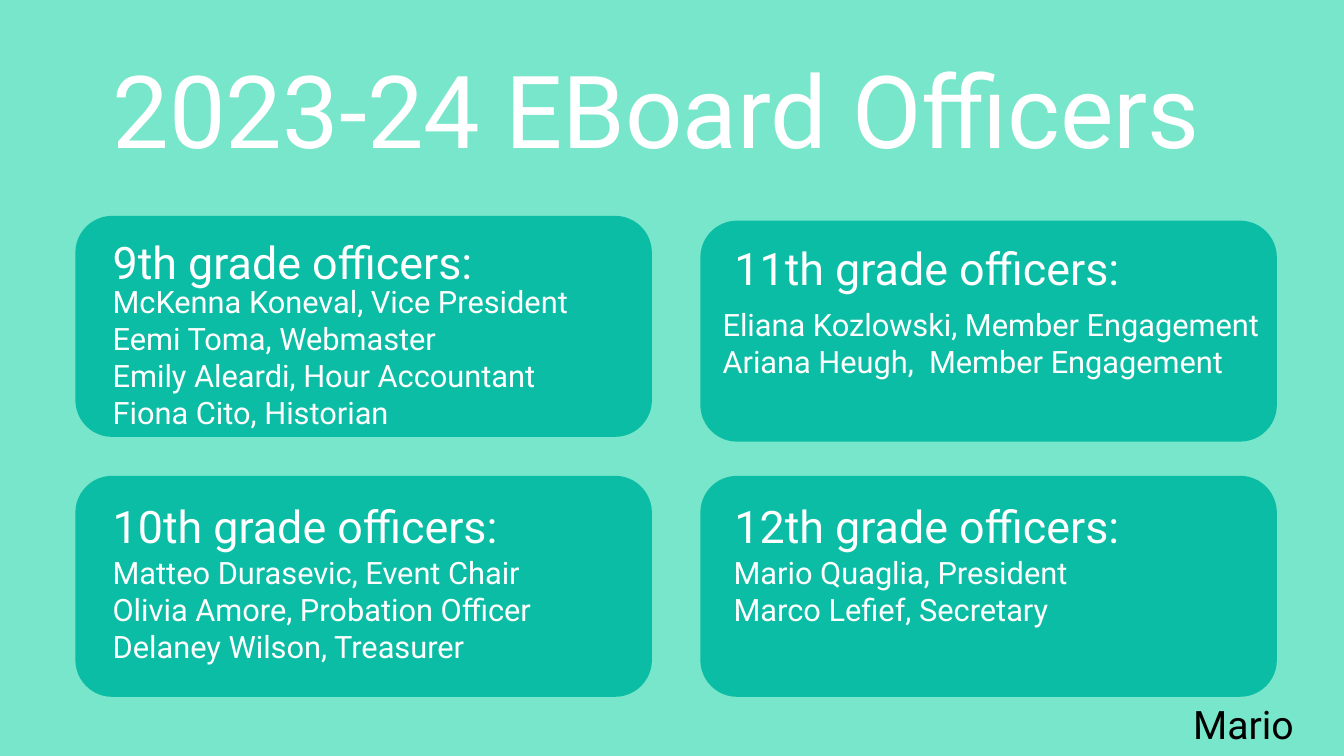
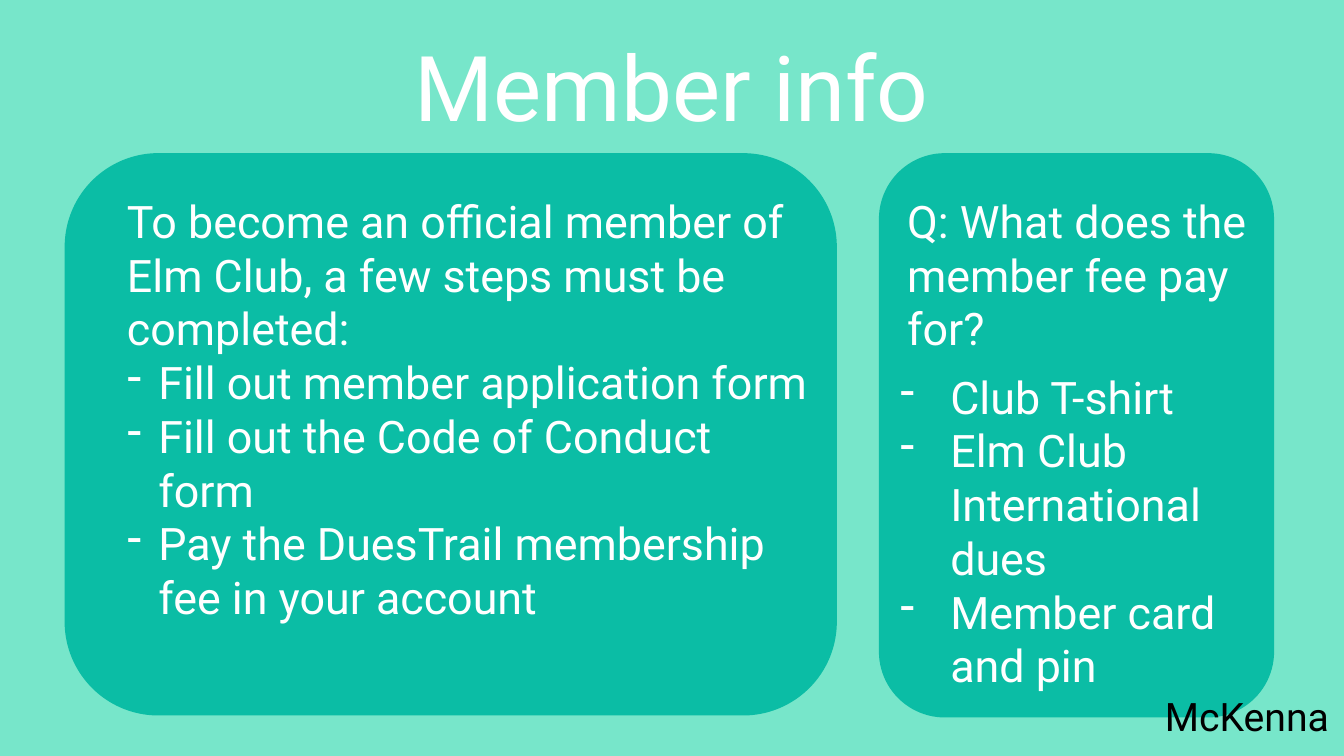
import dataclasses
import typing

import pptx
import pptx.dml.color
import pptx.enum.shapes
import pptx.enum.text
import pptx.oxml
import pptx.oxml.ns
import pptx.slide
import pptx.util

Cm = pptx.util.Cm
Pt = pptx.util.Pt
Color = pptx.dml.color.RGBColor
Align = pptx.enum.text.PP_ALIGN
Anchor = pptx.enum.text.MSO_ANCHOR


@dataclasses.dataclass(frozen=True)
class Theme:
    font: str = "Roboto"
    back: Color = Color(0x77, 0xE6, 0xCA)
    card: Color = Color(0x0B, 0xBD, 0xA5)
    white: Color = Color(0xFF, 0xFF, 0xFF)
    black: Color = Color(0x00, 0x00, 0x00)
    banner: float = 72
    title: float = 64.8
    body: float = 32
    names: float = 22
    tag: float = 28


THEME = Theme()


class Box(typing.NamedTuple):
    left: float
    top: float
    width: float
    height: float

    def place(self) -> tuple[Cm, ...]:
        return tuple(Cm(side) for side in self)


class Grade(typing.NamedTuple):
    card: Box
    head: tuple[float, float]
    list: tuple[float, float]
    title: str
    names: list[str]


LEFT, RIGHT = 1.9, 17.65
WIDE, HIGH = 14.53, 5.57
LOW = 11.99

GRADES = [
    Grade(Box(LEFT, 5.44, WIDE, HIGH), (2.59, 5.79), (2.59, 7.01),
          "9th grade officers:",
          ["McKenna Koneval, Vice President", "Eemi Toma, Webmaster",
           "Emily Aleardi, Hour Accountant", "Fiona Cito, Historian"]),
    Grade(Box(LEFT, LOW, WIDE, HIGH), (2.59, 12.45), (2.59, 13.84),
          "10th grade officers:",
          ["Matteo Durasevic, Event Chair", "Olivia Amore, Probation Officer",
           "Delaney Wilson, Treasurer"]),
    Grade(Box(RIGHT, 5.56, WIDE, HIGH), (18.26, 5.94), (17.96, 7.59),
          "11th grade officers:",
          ["Eliana Kozlowski, Member Engagement",
           "Ariana Heugh,  Member Engagement"]),
    Grade(Box(RIGHT, LOW, WIDE, HIGH), (18.26, 12.45), (18.24, 13.84),
          "12th grade officers:",
          ["Mario Quaglia, President", "Marco Lefief, Secretary"]),
]


def add_dash(para: typing.Any, indent: float) -> None:
    props = para._p.get_or_add_pPr()
    props.set("marL", str(Cm(indent)))
    props.set("indent", str(-Cm(indent)))
    dash = pptx.oxml.parse_xml(
        f'<a:buChar {pptx.oxml.ns.nsdecls("a")} char="-"/>')
    props.append(dash)


def add_text(slide: pptx.slide.Slide, box: Box, lines: list[str], *,
             size: float, color: Color = THEME.white,
             align: Align = Align.LEFT, anchor: Anchor = Anchor.TOP,
             pitch: float = 1.0, indent: float = 0, plain: int = 0) -> None:
    frame = slide.shapes.add_textbox(*box.place()).text_frame
    frame.word_wrap = True
    frame.vertical_anchor = anchor
    for pos, line in enumerate(lines):
        para = frame.add_paragraph() if pos else frame.paragraphs[0]
        para.alignment = align
        para.line_spacing = pitch
        if indent and pos >= plain:
            add_dash(para, indent)
        run = para.add_run()
        run.text = line
        run.font.name = THEME.font
        run.font.size = Pt(size)
        run.font.color.rgb = color


def add_card(slide: pptx.slide.Slide, box: Box) -> None:
    kind = pptx.enum.shapes.MSO_SHAPE.ROUNDED_RECTANGLE
    card = slide.shapes.add_shape(kind, *box.place())
    card.shadow.inherit = False
    card.fill.solid()
    card.fill.fore_color.rgb = THEME.card
    card.line.fill.background()


def add_tag(slide: pptx.slide.Slide, left: float, top: float,
            name: str) -> None:
    add_text(slide, Box(left, top, 4.75, 1.45), [name],
             size=THEME.tag, color=THEME.black)


def draw_board(slide: pptx.slide.Slide) -> None:
    add_text(slide, Box(2.59, 1.07, 31.27, 3.33), ["2023-24 EBoard Officers"],
             size=THEME.banner)
    for grade in GRADES:
        add_card(slide, grade.card)
        add_text(slide, Box(*grade.head, 13.6, 1.63), [grade.title],
                 size=THEME.body)
        add_text(slide, Box(*grade.list, 14.4, 0.25 + 0.94 * len(grade.names)),
                 grade.names, size=THEME.names)
    add_tag(slide, 29.82, 17.53, "Mario")


def draw_info(slide: pptx.slide.Slide) -> None:
    add_text(slide, Box(10.01, 0.46, 13.84, 3.73), ["Member info"],
             size=THEME.title, align=Align.CENTER, anchor=Anchor.MIDDLE,
             pitch=0.9)
    add_card(slide, Box(1.63, 3.86, 19.46, 14.17))
    add_card(slide, Box(22.15, 3.86, 9.96, 14.22))
    add_text(slide, Box(2.95, 4.75, 17.88, 13.41),
             ["To become an official member of Elm Club, "
              "a few steps must be completed:",
              "Fill out member application form",
              "Fill out the Code of Conduct form",
              "Pay the DuesTrail membership fee in your account"],
             size=THEME.body, indent=0.79, plain=1)
    add_text(slide, Box(22.61, 4.75, 10.19, 4.3),
             ["Q: What does the member fee pay for?"], size=THEME.body)
    add_text(slide, Box(22.43, 9.18, 10.46, 8.4),
             ["Club T-shirt", "Elm Club International dues",
              "Member card and pin"],
             size=THEME.body, indent=1.27)
    add_tag(slide, 29.11, 17.32, "McKenna")


def main() -> None:
    deck = pptx.Presentation()
    deck.slide_width = Cm(33.87)
    deck.slide_height = Cm(19.05)
    fill = deck.slide_master.background.fill
    fill.solid()
    fill.fore_color.rgb = THEME.back
    blank = deck.slide_layouts[6]
    for draw in (draw_board, draw_info):
        draw(deck.slides.add_slide(blank))
    deck.save("out.pptx")


if __name__ == "__main__":
    main()
